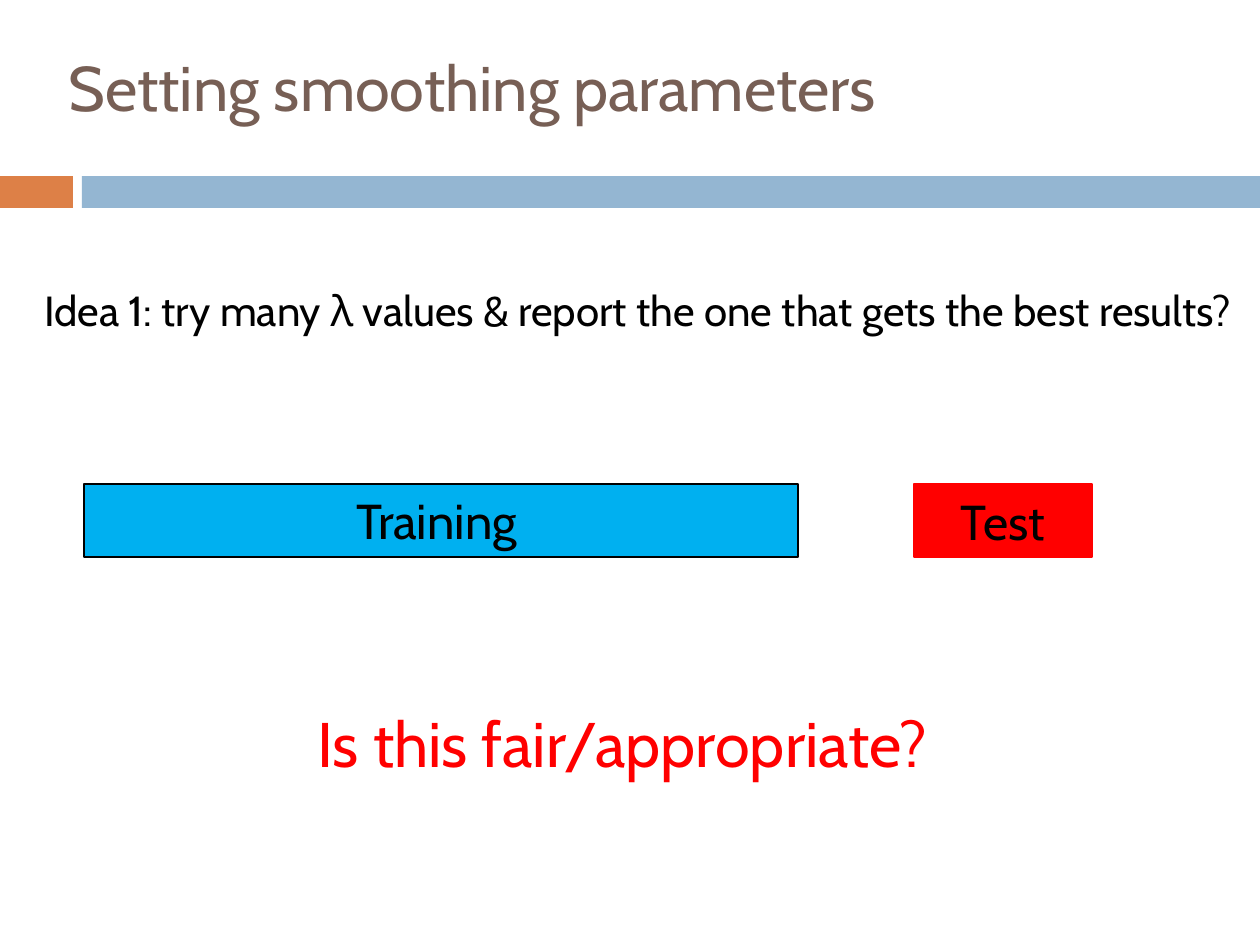
from pptx import Presentation
from pptx import util as u
from pptx.dml.color import RGBColor
from pptx.enum import shapes, text

FONT = "Cabin"
BLACK = "000000"
RED = "FF0000"
BAND_TOP, BAND_HEIGHT = 176, 32
DATA_TOP, DATA_HEIGHT = 484, 73


def px(length):
    return u.Emu(round(length * 914400 / 126))


def color(value):
    return RGBColor.from_string(value)


def write(shape, wording, size, ink, align=text.PP_ALIGN.LEFT,
          anchor=text.MSO_ANCHOR.TOP, wrap=True, grow=False):
    frame = shape.text_frame
    frame.word_wrap = wrap
    frame.vertical_anchor = anchor
    frame.auto_size = (text.MSO_AUTO_SIZE.SHAPE_TO_FIT_TEXT if grow
                       else text.MSO_AUTO_SIZE.NONE)
    para = frame.paragraphs[0]
    para.alignment = align
    span = para.add_run()
    span.text = wording
    span.font.name = FONT
    span.font.size = u.Pt(size)
    span.font.color.rgb = color(ink)
    return para


def add_bar(page, left, top, width, height, fill, line=None):
    bar = page.shapes.add_shape(shapes.MSO_SHAPE.RECTANGLE,
                                px(left), px(top), px(width), px(height))
    bar.shadow.inherit = False
    bar.fill.solid()
    bar.fill.fore_color.rgb = color(fill)
    if line:
        bar.line.color.rgb = color(line)
        bar.line.width = u.Pt(1)
    else:
        bar.line.fill.background()
    return bar


def add_label(page, left, top, width, height, wording, size, ink, **layout):
    box = page.shapes.add_textbox(px(left), px(top), px(width), px(height))
    return write(box, wording, size, ink, **layout)


def main():
    deck = Presentation()
    deck.slide_width, deck.slide_height = px(1260), px(945)
    page = deck.slides.add_slide(deck.slide_layouts[6])

    add_bar(page, 0, BAND_TOP, 73, BAND_HEIGHT, "DD8047")
    add_bar(page, 82, BAND_TOP, 1178, BAND_HEIGHT, "94B6D2")
    add_label(page, 56, 8, 1183, 157, "Setting smoothing parameters", 36,
              "775F55", anchor=text.MSO_ANCHOR.MIDDLE)

    idea = add_label(
        page, 32, 284, 1218, 199,
        "Idea 1: try many λ values & report the one that gets the best results?",
        24, BLACK)
    idea.line_spacing = 0.9
    idea.space_before = u.Pt(7)

    test = add_bar(page, 914, DATA_TOP, 178, DATA_HEIGHT, RED, RED)
    write(test, "Test", 28, BLACK, align=text.PP_ALIGN.CENTER,
          anchor=text.MSO_ANCHOR.MIDDLE, grow=True)
    add_bar(page, 84, DATA_TOP, 714, DATA_HEIGHT, "00B0F0", BLACK)
    add_label(page, 344, DATA_TOP, 202, 72, "Training", 28, BLACK,
              wrap=False, grow=True)

    add_label(page, 305, 698, 651, 89, "Is this fair/appropriate?", 36, RED,
              grow=True)
    deck.save("out.pptx")


if __name__ == "__main__":
    main()
